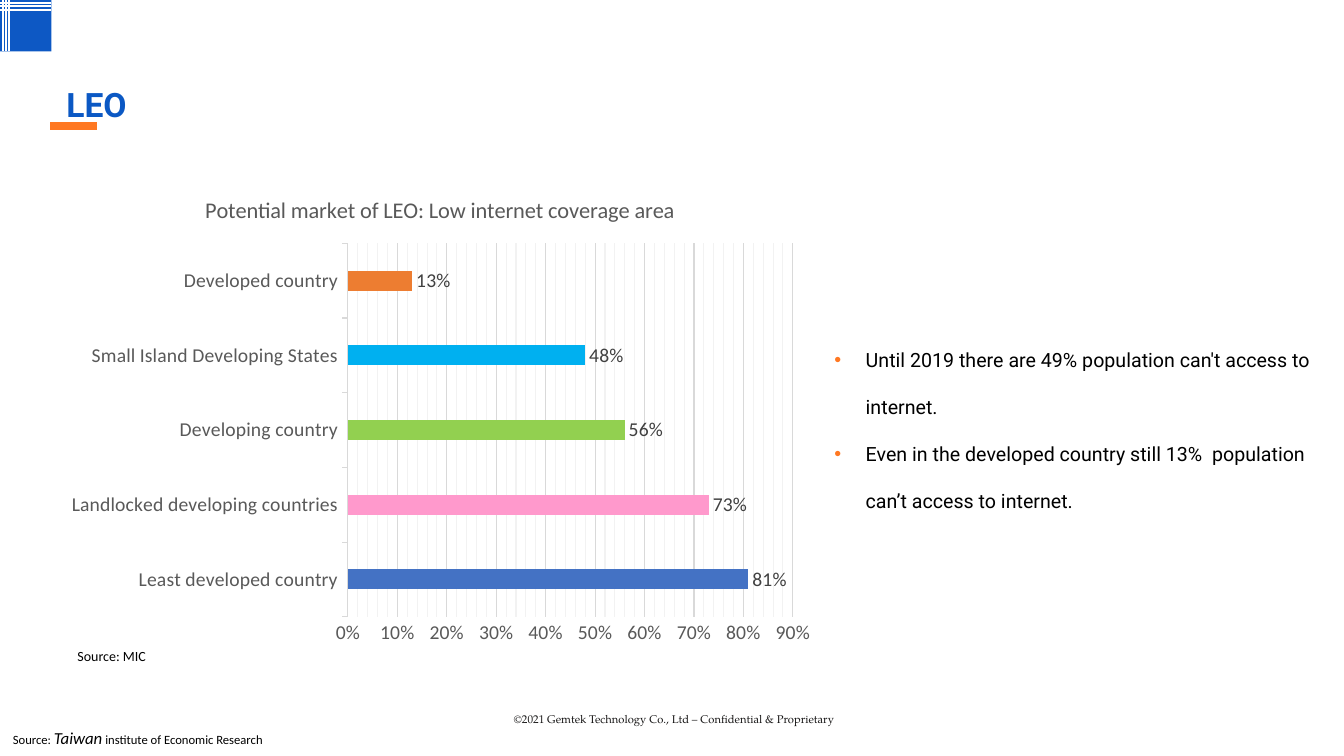
from lxml import etree
from pptx import Presentation, util as u
from pptx.chart import data
from pptx.dml import color as dml
from pptx.enum import chart as ch, shapes, text
from pptx.oxml import parse_xml, ns

deck = Presentation()
deck.slide_width, deck.slide_height = u.Inches(13.33), u.Inches(7.5)
page = deck.slides.add_slide(deck.slide_layouts[6])
column, row = deck.slide_width / 100, deck.slide_height / 100
shade = dml.RGBColor.from_string


def grid(x1, y1, x2, y2):
    return [int(x1 * column), int(y1 * row), int(x2 * column), int(y2 * row)]


def style(font, name, size, hue, bold=False, italic=False):
    font.name, font.size, font.bold, font.italic = name, u.Pt(size), bold, italic
    font.color.rgb = shade(hue)


corner_width, corner_height = 3.83, 6.8
corner = page.shapes.add_shape(shapes.MSO_SHAPE.RECTANGLE, *grid(0, 0, corner_width, corner_height))
corner.shadow.inherit = False
corner.fill.solid()
corner.fill.fore_color.rgb = shade("0D58C4")
corner.line.fill.background()

rules = [((3.75, 16.67, 7.2, 16.67), "FF7822", 6)]
for x, y, weight in [(0.22, 0.4, 1.5), (0.45, 0.8, 1), (0.6, 1.2, 0.5), (0.7, 1.33, 0.25)]:
    rules.append(((x, 0, x, corner_height), "FFFFFF", weight))
    rules.append(((corner_width, y, 0, y), "FFFFFF", weight))
for ends, hue, weight in rules:
    rule = page.shapes.add_connector(shapes.MSO_CONNECTOR.STRAIGHT, *grid(*ends))
    rule.line.color.rgb = shade(hue)
    rule.line.width = u.Pt(weight)
    etree.SubElement(rule._element.spPr, ns.qn("a:effectLst"))

labels = [
    ((37.2, 93.47, 25.65, 3.2), text.PP_ALIGN.RIGHT,
     [("©2021 Gemtek Technology Co., Ltd – Confidential & Proprietary", "TeX Gyre Pagella", 8, "181717")]),
    ((4.2, 11.07, 91.58, 5.33), text.PP_ALIGN.LEFT, [("LEO", "Roboto", 24, "0B58C4", True)]),
    ((0.22, 95.6, 20.55, 4), text.PP_ALIGN.LEFT,
     [("Source: ", "Calibri", 9, "000000"),
      ("Taiwan", "Calibri", 12, "000000", False, True),
      (" institute of Economic Research", "Calibri", 9, "000000")]),
    ((5.03, 84.93, 6.9, 3.6), text.PP_ALIGN.LEFT, [("Source: MIC", "Calibri", 10, "000000")]),
]
for area, align, spans in labels:
    box = page.shapes.add_textbox(*grid(*area))
    box.text_frame.word_wrap = area[2] > 50
    box.text_frame.vertical_anchor = text.MSO_ANCHOR.MIDDLE
    para = box.text_frame.paragraphs[0]
    para.alignment = align
    for words, *look in spans:
        span = para.add_run()
        span.text = words
        style(span.font, *look)

findings = page.shapes.add_textbox(*grid(61.35, 42.27, 37.43, 25.47)).text_frame
findings.word_wrap = True
findings.text = (
    "Until 2019 there are 49% population can't access to internet.\n"
    "Even in the developed country still 13%  population can’t access to internet."
)
for para in findings.paragraphs:
    para.line_spacing = 2.0
    props = para._p.get_or_add_pPr()
    props.set("marL", str(u.Inches(0.31)))
    props.set("indent", str(-u.Inches(0.31)))
    bullet_color = etree.SubElement(props, ns.qn("a:buClr"))
    etree.SubElement(bullet_color, ns.qn("a:srgbClr"), val="FF7822")
    etree.SubElement(props, ns.qn("a:buFont"), typeface="Arial")
    etree.SubElement(props, ns.qn("a:buChar"), char="•")
    style(para.runs[0].font, "Roboto", 14, "000000")

markets = [
    ("Least developed country", 0.81, "4472C4"),
    ("Landlocked developing countries", 0.73, "FF99CC"),
    ("Developing country", 0.56, "92D050"),
    ("Small Island Developing States", 0.48, "00B0F0"),
    ("Developed country", 0.13, "ED7D31"),
]
coverage = data.CategoryChartData(number_format="0%")
coverage.categories = [name for name, share, hue in markets]
coverage.add_series("Series 1", [share for name, share, hue in markets])
chart = page.shapes.add_chart(
    ch.XL_CHART_TYPE.BAR_CLUSTERED, *grid(4.2, 23.33, 57.08, 63.33), coverage
).chart
style(chart.font, "Calibri", 14, "000000")
chart.has_legend = False
chart.has_title = True
heading = chart.chart_title.text_frame
heading.text = "Potential market of LEO: Low internet coverage area"
style(heading.paragraphs[0].runs[0].font, "Calibri", 16, "595959")

plot = chart.plots[0]
plot.gap_width = 269
plot.vary_by_categories = False
plot.has_data_labels = True
values = plot.data_labels
values.show_value = True
values.number_format, values.number_format_is_linked = "0%", False
values.position = ch.XL_LABEL_POSITION.OUTSIDE_END
style(values.font, "Calibri", 14, "404040")
for index, (name, share, hue) in enumerate(markets):
    fill = plot.series[0].points[index].format.fill
    fill.solid()
    fill.fore_color.rgb = shade(hue)

countries, percent = chart.category_axis, chart.value_axis
for axis in (countries, percent):
    style(axis.tick_labels.font, "Calibri", 14, "595959")
countries.major_tick_mark = ch.XL_TICK_MARK.OUTSIDE
percent.major_tick_mark = ch.XL_TICK_MARK.NONE
percent.minimum_scale, percent.maximum_scale = 0, 0.9
percent.major_unit, percent.minor_unit = 0.1, 0.02
percent.tick_labels.number_format = "0%"
percent.tick_labels.number_format_is_linked = False
percent.format.line.fill.background()
percent.has_major_gridlines = percent.has_minor_gridlines = True
for part in (countries, percent.major_gridlines):
    part.format.line.color.rgb = shade("D9D9D9")
    part.format.line.width = u.Pt(0.75)
minor_lines = percent._element.find(ns.qn("c:minorGridlines"))
minor_lines.append(parse_xml(
    f'<c:spPr {ns.nsdecls("c", "a")}><a:ln w="{u.Pt(0.75)}"><a:solidFill>'
    '<a:srgbClr val="F2F2F2"/></a:solidFill></a:ln></c:spPr>'
))

layout = parse_xml(
    f'<c:layout {ns.nsdecls("c")}><c:manualLayout><c:layoutTarget val="inner"/>'
    '<c:xMode val="edge"/><c:yMode val="edge"/><c:x val="0.38"/><c:y val="0.14"/>'
    '<c:w val="0.58"/><c:h val="0.78"/></c:manualLayout></c:layout>'
)
plot_area = chart._chartSpace.chart.plotArea
for old in plot_area.findall(ns.qn("c:layout")):
    plot_area.remove(old)
plot_area.insert(0, layout)

deck.save("out.pptx")
